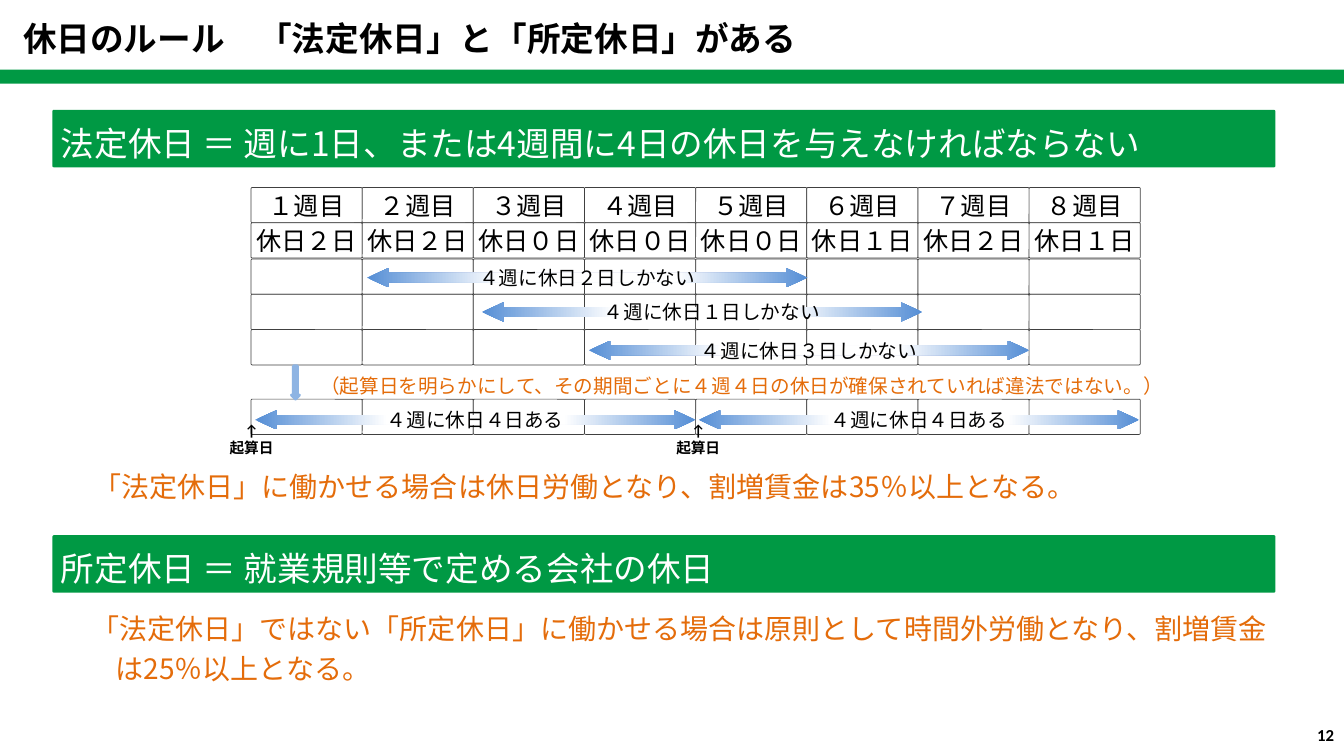
"""Build the slide that explains statutory and company holidays."""
from pptx import Presentation, oxml
from pptx import util as u
from pptx.dml import color
from pptx.enum import shapes, text
from pptx.oxml import ns

GREEN = color.RGBColor(0x00, 0x99, 0x44)
ORANGE = color.RGBColor(0xE4, 0x6C, 0x0A)
BLUE = color.RGBColor(0x55, 0x8E, 0xD5)
PALE_BLUE = color.RGBColor(0x8E, 0xB4, 0xE3)
GREY = color.RGBColor(0x40, 0x40, 0x40)
BLACK = color.RGBColor(0x00, 0x00, 0x00)
WHITE = color.RGBColor(0xFF, 0xFF, 0xFF)

JAPANESE = "Noto Sans CJK JP"
LATIN = "Lato"
NUMERIC = "Calibri"

SHAPE = shapes.MSO_SHAPE
ALIGN = text.PP_ALIGN
ANCHOR = text.MSO_ANCHOR

GRID_LEFT, GRID_WIDTH, ROW_HEIGHT = 2.49, 8.82, 0.35
ROW_TOPS = (1.86, 2.21, 2.57, 2.92, 3.27, 3.96)
WEEKS = "１２３４５６７８"
HOLIDAYS = "２２０００１２１"
CELL_WIDTH = GRID_WIDTH / len(WEEKS)


class HolidaySlide:
    """Holds the page and draws each kind of element in one style."""

    def __init__(self, page):
        self.page = page

    def fill_text(self, box, wording, size, font=LATIN, ink=BLACK, bold=False,
                  align=ALIGN.CENTER, anchor=ANCHOR.MIDDLE, margins=None):
        frame = box.text_frame
        frame.word_wrap = True
        frame.vertical_anchor = anchor
        if margins:
            (frame.margin_left, frame.margin_top, frame.margin_right,
             frame.margin_bottom) = map(u.Inches, margins)
        frame.text = wording
        for para in frame.paragraphs:
            para.alignment = align
            for span in para.runs:
                span.font.size = u.Pt(size)
                span.font.name = font
                span.font.bold = bold
                span.font.color.rgb = ink
                east_asian = oxml.parse_xml(
                    f'<a:ea {ns.nsdecls("a")} typeface="{JAPANESE}"/>')
                span.font._element.append(east_asian)

    def shape(self, kind, place, fill=None, line=None, weight=0.5, adjust=()):
        box = self.page.shapes.add_shape(kind, *map(u.Inches, place))
        box.shadow.inherit = False
        for index, value in enumerate(adjust):
            box.adjustments[index] = value
        if fill is None:
            box.fill.background()
        else:
            box.fill.solid()
            box.fill.fore_color.rgb = fill
        if line is None:
            box.line.fill.background()
        else:
            box.line.color.rgb = line
            box.line.width = u.Pt(weight)
        return box

    def label(self, place, wording, size, **style):
        box = self.page.shapes.add_textbox(*map(u.Inches, place))
        self.fill_text(box, wording, size, bold=True, **style)

    def cell(self, column, top, wording):
        place = (GRID_LEFT + column * CELL_WIDTH, top, CELL_WIDTH, ROW_HEIGHT)
        box = self.shape(SHAPE.ROUNDED_RECTANGLE, place, WHITE, GREY, adjust=(0.036,))
        if wording:
            self.fill_text(box, wording, 18, margins=(0.04,) * 4)

    def period(self, left, top, wording):
        box = self.shape(SHAPE.LEFT_RIGHT_ARROW, (left, top, 4.37, 0.19),
                         adjust=(0.5, 1.12))
        box.fill.gradient()
        box.fill.gradient_angle = 0
        stops = box._element.spPr.find(ns.qn("a:gradFill")).find(ns.qn("a:gsLst"))
        for stop in list(stops):
            stops.remove(stop)
        for percent, tint in ((0, BLUE), (30, WHITE), (70, WHITE), (100, BLUE)):
            stops.append(oxml.parse_xml(
                f'<a:gs {ns.nsdecls("a")} pos="{percent * 1000}">'
                f'<a:srgbClr val="{tint}"/></a:gs>'))
        self.fill_text(box, wording, 14)

    def passage(self, place, wording, size, ink=ORANGE, fill=None, anchor=ANCHOR.TOP):
        box = self.shape(SHAPE.ROUNDED_RECTANGLE, place, fill, adjust=(0.026,))
        self.fill_text(box, wording, size, JAPANESE, ink, align=ALIGN.LEFT,
                       anchor=anchor, margins=(0.08, 0.04, 0, 0.04))
        for para in box.text_frame.paragraphs:
            para.line_spacing = 1.2
            properties = para._p.get_or_add_pPr()
            properties.set("marL", str(u.Inches(0.24)))
            properties.set("indent", str(u.Inches(-0.24)))

    def heading(self, top, wording):
        self.passage((0.52, top, 12.13, 0.57), wording, 24, WHITE, GREEN, ANCHOR.MIDDLE)


def main():
    """Draw the slide and save it."""
    deck = Presentation()
    deck.slide_width, deck.slide_height = u.Inches(13.33), u.Inches(7.5)
    slide = HolidaySlide(deck.slides.add_slide(deck.slide_layouts[6]))

    slide.shape(SHAPE.RECTANGLE, (0, 0.69, 13.33, 0.14), GREEN)
    slide.label((0.13, 0.13, 11.81, 0.5), "休日のルール　「法定休日」と「所定休日」がある", 24,
                font=JAPANESE, align=ALIGN.LEFT, anchor=ANCHOR.TOP)

    slide.heading(1.09, "法定休日 ＝ 週に1日、または4週間に4日の休日を与えなければならない")
    slide.heading(5.31, "所定休日 ＝ 就業規則等で定める会社の休日")

    for row, top in enumerate(ROW_TOPS):
        for column, (week, days) in enumerate(zip(WEEKS, HOLIDAYS)):
            wording = {0: f"{week}週目", 1: f"休日{days}日"}.get(row)
            slide.cell(column, top, wording)

    for left, top, wording in (
        (3.64, 2.66, "４週に休日２日しかない"),
        (4.78, 3, "　４週に休日１日しかない"),
        (5.84, 3.38, "４週に休日３日しかない"),
        (2.53, 4.07, "４週に休日４日ある"),
        (6.93, 4.07, "４週に休日４日ある"),
    ):
        slide.period(left, top, wording)

    for left in (1.94, 6.37):
        slide.label((left, 4.14, 1.11, 0.43), "↑\n起算日", 10.5)
    slide.shape(SHAPE.DOWN_ARROW, (2.89, 3.63, 0.08, 0.33), PALE_BLUE, PALE_BLUE, 2)

    for place, wording, size in (
        ((3.09, 3.62, 10.24, 0.79),
         "（起算日を明らかにして、その期間ごとに４週４日の休日が確保されていれば違法ではない。）", 14),
        ((0.84, 4.54, 12.28, 0.79),
         "「法定休日」に働かせる場合は休日労働となり、割増賃金は35％以上となる。", 20),
        ((0.82, 5.95, 11.91, 0.79),
         "「法定休日」ではない「所定休日」に働かせる場合は原則として時間外労働となり、"
         "割増賃金は25％以上となる。", 20),
    ):
        slide.passage(place, wording, size)

    slide.label((10.22, 7.09, 3.11, 0.4), "12", 12, font=NUMERIC, align=ALIGN.RIGHT)
    deck.save("out.pptx")


if __name__ == "__main__":
    main()
